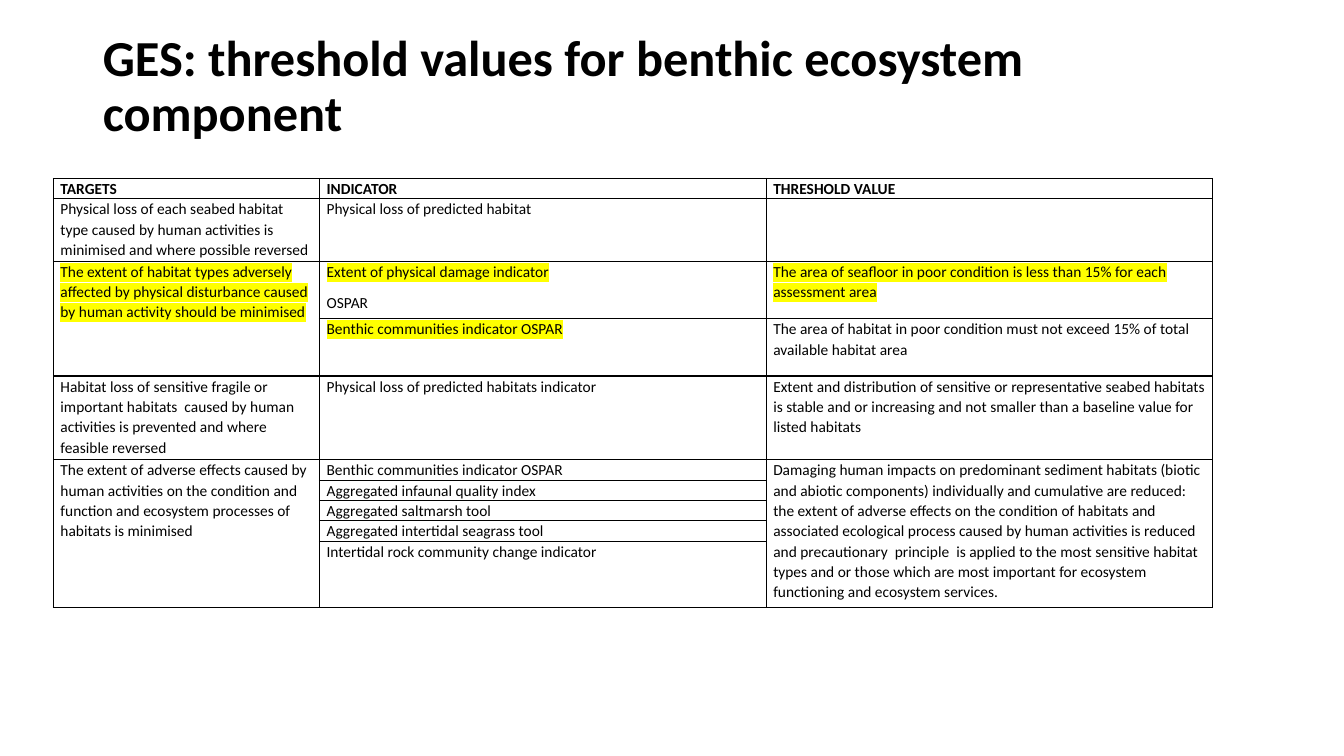
import pptx
import pptx.dml.color
import pptx.enum.text
import pptx.oxml
import pptx.oxml.ns
import pptx.util

Inches = pptx.util.Inches
Pt = pptx.util.Pt
Text = pptx.enum.text
qn = pptx.oxml.ns.qn


def color(code):
    return pptx.dml.color.RGBColor.from_string(code)


def apply(target, values):
    for name, value in values.items():
        setattr(target, name, value)


def element(tag, code):
    space = pptx.oxml.ns.nsdecls("a")
    return pptx.oxml.parse_xml(
        f'<a:{tag} {space}><a:srgbClr val="{code}"/></a:{tag}>')


class Deck:
    face = "Calibri"
    ink = "000000"
    marker = "FFFF00"
    line = {"line_spacing": 1.07, "space_after": Pt(8)}
    inset = {"margin_left": Inches(0.07), "margin_right": Inches(0.07),
             "margin_top": 0, "margin_bottom": 0}

    def __init__(self, width, height):
        self.file = pptx.Presentation()
        apply(self.file, {"slide_width": Inches(width),
                          "slide_height": Inches(height)})
        self.slide = self.file.slides.add_slide(self.file.slide_layouts[5])

    def label(self, para, text, size, bold, mark=False):
        run = para.add_run()
        run.text = text
        apply(run.font, {"name": self.face, "size": Pt(size), "bold": bold})
        run.font.color.rgb = color(self.ink)
        if mark:
            fill = run.font._element.find(qn("a:solidFill"))
            fill.addnext(element("highlight", self.marker))

    def title(self, text, left, top, width, height):
        shape = self.slide.shapes.title
        apply(shape, {"left": Inches(left), "top": Inches(top),
                      "width": Inches(width), "height": Inches(height)})
        apply(shape.text_frame, {
            "word_wrap": True,
            "auto_size": Text.MSO_AUTO_SIZE.NONE,
            "vertical_anchor": Text.MSO_ANCHOR.MIDDLE})
        para = shape.text_frame.paragraphs[0]
        apply(para, {"alignment": Text.PP_ALIGN.LEFT, "line_spacing": 0.9})
        self.label(para, text, 36, True)

    def border(self, cell):
        props = cell._tc.get_or_add_tcPr()
        for place, side in enumerate(("lnL", "lnR", "lnT", "lnB")):
            edge = pptx.oxml.parse_xml(
                f'<a:{side} {pptx.oxml.ns.nsdecls("a")} w="{Pt(1)}"/>')
            edge.append(element("solidFill", self.ink))
            props.insert(place, edge)

    def cell(self, cell, text, bold):
        apply(cell, self.inset)
        cell.fill.background()
        self.border(cell)
        frame = cell.text_frame
        for place, part in enumerate(text.split("\n")):
            para = frame.add_paragraph() if place else frame.paragraphs[0]
            apply(para, self.line)
            self.label(para, part.lstrip("*"), 11, bold, part.startswith("*"))

    def table(self, data, left, top, widths, heights, spans):
        frame = self.slide.shapes.add_table(
            len(heights), len(widths), Inches(left), Inches(top),
            Inches(sum(widths)), Inches(sum(heights)))
        table = frame.table
        apply(table, {"first_row": False, "horz_banding": False})
        for col, width in zip(table.columns, widths):
            col.width = Inches(width)
        for row, height in zip(table.rows, heights):
            row.height = Inches(height)
        for first, last, col in spans:
            table.cell(first, col).merge(table.cell(last, col))
        for row, texts in enumerate(data):
            for col, text in enumerate(texts):
                self.cell(table.cell(row, col), text, row == 0)


def main():
    deck = Deck(13.33, 7.5)
    deck.title("GES: threshold values for benthic ecosystem component",
               0.92, 0.4, 11.5, 0.94)
    goals = [
        ("TARGETS", "INDICATOR", "THRESHOLD VALUE"),
        ("Physical loss of each seabed habitat type caused by human "
         "activities is minimised and where possible reversed",
         "Physical loss of predicted habitat", ""),
        ("*The extent of habitat types adversely affected by physical "
         "disturbance caused by human activity should be minimised",
         "*Extent of physical damage indicator\nOSPAR",
         "*The area of seafloor in poor condition is less than 15% for "
         "each assessment area"),
        ("", "*Benthic communities indicator OSPAR",
         "The area of habitat in poor condition must not exceed 15% of "
         "total available habitat area"),
        ("Habitat loss of sensitive fragile or important habitats  caused "
         "by human activities is prevented and where feasible reversed",
         "Physical loss of predicted habitats indicator",
         "Extent and distribution of sensitive or representative seabed "
         "habitats is stable and or increasing and not smaller than a "
         "baseline value for listed habitats"),
        ("The extent of adverse effects caused by human activities on the "
         "condition and function and ecosystem processes of habitats is "
         "minimised",
         "Benthic communities indicator OSPAR",
         "Damaging human impacts on predominant sediment habitats (biotic "
         "and abiotic components) individually and cumulative are reduced: "
         "the extent of adverse effects on the condition of habitats and "
         "associated ecological process caused by human activities is "
         "reduced and precautionary  principle  is applied to the most "
         "sensitive habitat types and or those which are most important "
         "for ecosystem functioning and ecosystem services."),
        ("", "Aggregated infaunal quality index", ""),
        ("", "Aggregated saltmarsh tool", ""),
        ("", "Aggregated intertidal seagrass tool", ""),
        ("", "Intertidal rock community change indicator", ""),
    ]
    deck.table(goals, 0.53, 1.77, [2.64, 4.43, 4.43],
               [0.2, 0.62, 0.57, 0.57, 0.83] + [0.2] * 4 + [0.66],
               [(2, 3, 0), (5, 9, 0), (5, 9, 2)])
    deck.file.save("out.pptx")


if __name__ == "__main__":
    main()
